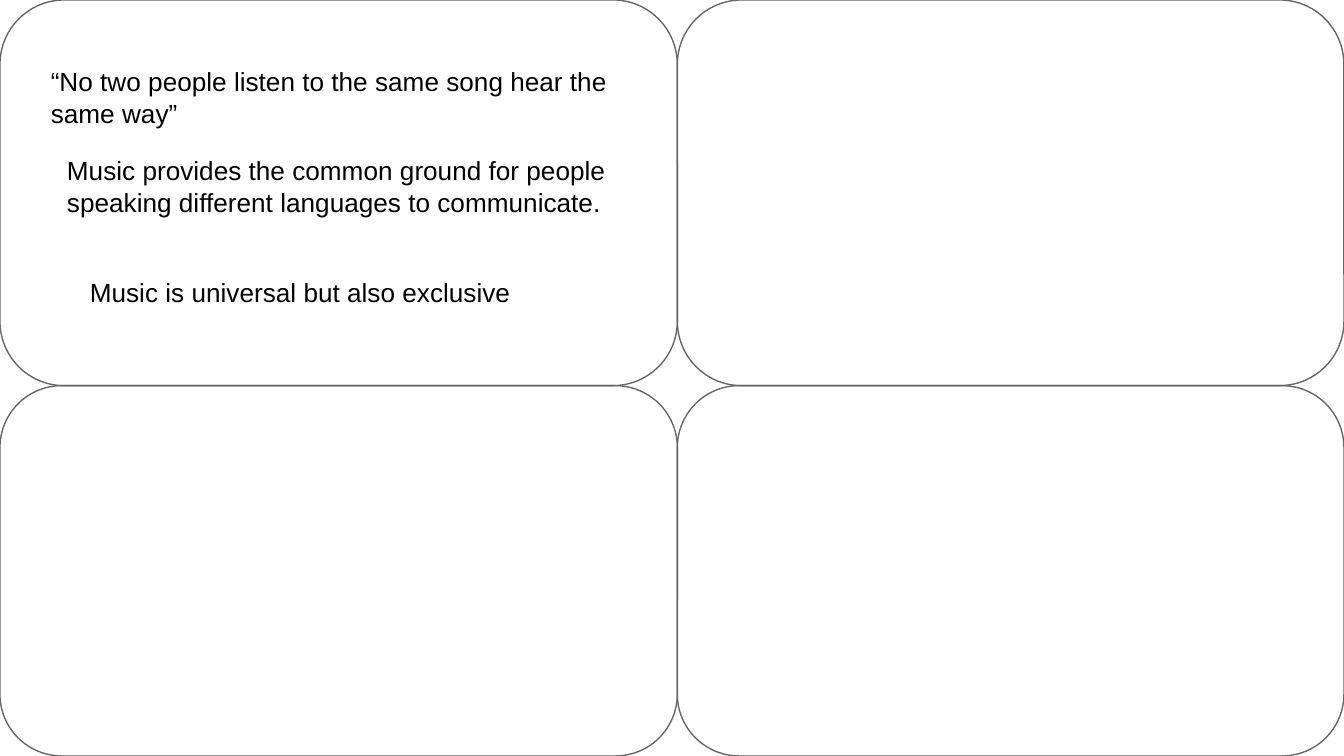
from itertools import product

from pptx import Presentation
from pptx.dml.color import RGBColor
from pptx.enum.shapes import MSO_SHAPE
from pptx.util import Inches, Pt

COLORS = {"outline": "666666", "text": "000000"}
WIDTH = 10
HEIGHT = WIDTH * 9 / 16
COLUMN_EDGES = [0, 5.04, WIDTH]
ROW_EDGES = [0, 2.87, HEIGHT]
QUOTE_SIZE = (4.53, 0.66)
QUOTES = [
    (0.28, 0.39, "“No two people listen to the same song hear the same way”"),
    (0.4, 1.05, "Music provides the common ground for people speaking different languages to communicate."),
    (0.57, 1.96, "Music is universal but also exclusive"),
]


class QuadrantSlide:
    font_name = "Arial"
    font_size = Pt(14)
    line_width = Pt(0.75)
    corner = 0.167
    inset = Inches(0.1)

    def __init__(self, deck):
        self.slide = deck.slides.add_slide(deck.slide_layouts[6])
        self.quadrants = self.slide.shapes.add_group_shape()

    def quadrant(self, row, column):
        left, right = COLUMN_EDGES[column:column + 2]
        top, bottom = ROW_EDGES[row:row + 2]
        panel = self.quadrants.shapes.add_shape(
            MSO_SHAPE.ROUNDED_RECTANGLE,
            *map(Inches, (left, top, right - left, bottom - top)),
        )
        panel.adjustments[0] = self.corner
        panel.shadow.inherit = False
        panel.fill.background()
        panel.line.color.rgb = RGBColor.from_string(COLORS["outline"])
        panel.line.width = self.line_width

    def quote(self, left, top, wording):
        box = self.slide.shapes.add_textbox(*map(Inches, (left, top, *QUOTE_SIZE)))
        frame = box.text_frame
        frame.word_wrap = True
        frame.margin_left = frame.margin_right = self.inset
        frame.margin_top = frame.margin_bottom = self.inset
        run = frame.paragraphs[0].add_run()
        run.text = wording
        run.font.name = self.font_name
        run.font.size = self.font_size
        run.font.color.rgb = RGBColor.from_string(COLORS["text"])


def main():
    deck = Presentation()
    deck.slide_width = Inches(WIDTH)
    deck.slide_height = Inches(HEIGHT)
    board = QuadrantSlide(deck)
    for row, column in product(range(2), repeat=2):
        board.quadrant(row, column)
    for left, top, wording in QUOTES:
        board.quote(left, top, wording)
    deck.save("out.pptx")


if __name__ == "__main__":
    main()
